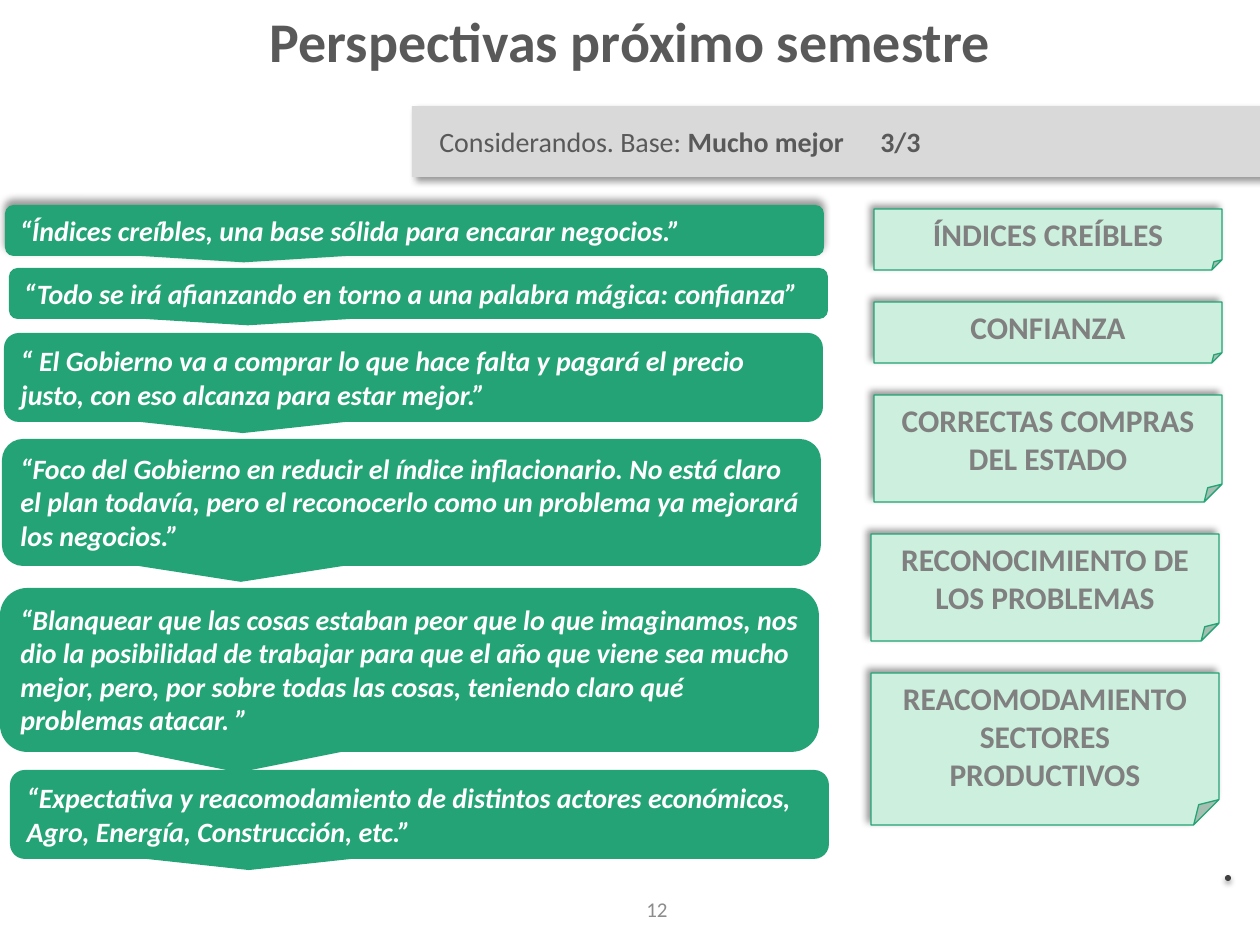
import pptx
import pptx.util
import pptx.dml.color
import pptx.enum.shapes
import pptx.enum.text
import pptx.oxml
import pptx.oxml.ns

RGB = pptx.dml.color.RGBColor
SHAPE = pptx.enum.shapes.MSO_SHAPE
ALIGN = pptx.enum.text.PP_ALIGN
ANCHOR = pptx.enum.text.MSO_ANCHOR

GREEN = RGB(0x24, 0xA4, 0x76)
MINT = RGB(0xCD, 0xEF, 0xDE)
WHITE = RGB(0xFF, 0xFF, 0xFF)
SILVER = RGB(0xD9, 0xD9, 0xD9)
GRAY = RGB(0x80, 0x80, 0x80)
LIGHT_GRAY = RGB(0x8C, 0x8C, 0x8C)
DARK_GRAY = RGB(0x59, 0x59, 0x59)
CHARCOAL = RGB(0x40, 0x40, 0x40)

EMU_PER_PX = 914400 / 126

# left, top, height, text
QUOTES = [
    (5, 205, 51, "“Índices creíbles, una base sólida para encarar negocios.”"),
    (9, 268, 51, "“Todo se irá afianzando en torno a una palabra mágica: confianza”"),
    (4, 333, 89, "“ El Gobierno va a comprar lo que hace falta y pagará el precio "
                 "justo, con eso alcanza para estar mejor.”"),
    (2, 439, 127, "“Foco del Gobierno en reducir el índice inflacionario. No está claro "
                  "el plan todavía, pero el reconocerlo como un problema ya mejorará "
                  "los negocios.”"),
    (0, 588, 164, "“Blanquear que las cosas estaban peor que lo que imaginamos, nos dio "
                  "la posibilidad de trabajar para que el año que viene sea mucho mejor, "
                  "pero, por sobre todas las cosas, teniendo claro qué problemas atacar. ”"),
    (10, 770, 89, "“Expectativa y reacomodamiento de distintos actores económicos, "
                  "Agro, Energía, Construcción, etc.”"),
]
# left, height, text
NOTES = [
    (874, 61, "ÍNDICES CREÍBLES"),
    (874, 61, "CONFIANZA"),
    (874, 107, "CORRECTAS COMPRAS DEL ESTADO"),
    (871, 107, "RECONOCIMIENTO DE LOS PROBLEMAS"),
    (871, 152, "REACOMODAMIENTO SECTORES PRODUCTIVOS"),
]
NOTES_TOP, NOTES_GAP = 209, 32


def px(n):
    return pptx.util.Emu(round(n * EMU_PER_PX))


def set_font(p, size, color, bold=None, italic=None):
    f = p.font
    f.name, f.size, f.color.rgb = "Calibri", pptx.util.Pt(size), color
    f.bold, f.italic = bold, italic


def add_shadow(sp, direction, blur=4, dist=3, alpha=40):
    effects = sp._element.spPr.find(pptx.oxml.ns.qn("a:effectLst"))
    effects.append(pptx.oxml.parse_xml(
        f'<a:outerShdw {pptx.oxml.ns.nsdecls("a")} blurRad="{round(blur * 12700)}" '
        f'dist="{round(dist * 12700)}" dir="{direction * 60000}" rotWithShape="0">'
        f'<a:srgbClr val="000000"><a:alpha val="{alpha * 1000}"/></a:srgbClr>'
        '</a:outerShdw>'))


def add_box(s, kind, x, y, w, h, fill, line=None):
    sp = s.shapes.add_shape(kind, px(x), px(y), px(w), px(h))
    sp.shadow.inherit = False
    sp.fill.solid()
    sp.fill.fore_color.rgb = fill
    if line is None:
        sp.line.fill.background()
    else:
        sp.line.color.rgb = line
        sp.line.width = pptx.util.Pt(0.75)
    return sp


def write(sp, text, align, size, color, bold=None, italic=None, anchor=ANCHOR.TOP):
    tf = sp.text_frame
    tf.word_wrap = True
    tf.auto_size = pptx.enum.text.MSO_AUTO_SIZE.NONE
    tf.vertical_anchor = anchor
    p = tf.paragraphs[0]
    p.text = text
    p.alignment = align
    set_font(p, size, color, bold, italic)


def add_title(s, text):
    sp = s.shapes.title
    sp.left, sp.top, sp.width, sp.height = px(0), px(0), px(1260), px(81)
    write(sp, text, ALIGN.CENTER, 32, DARK_GRAY, bold=True)


def add_banner(s):
    sp = add_box(s, SHAPE.RECTANGLE, 412, 106, 877, 71, SILVER)
    add_shadow(sp, 45)
    write(sp, "", ALIGN.LEFT, 16, DARK_GRAY, anchor=ANCHOR.MIDDLE)
    p = sp.text_frame.paragraphs[0]
    p._p.get_or_add_pPr().set("marL", str(px(15)))
    p.add_run().text = "Considerandos. Base: "
    r = p.add_run()
    r.text = "Mucho mejor\t3/3"
    r.font.bold = True


def add_quote(s, x, y, h, text):
    sp = add_box(s, SHAPE.ROUNDED_RECTANGULAR_CALLOUT, x, y, 819, h, GREEN)
    write(sp, text, ALIGN.LEFT, 16, WHITE, bold=True, italic=True)
    return sp


def add_note(s, x, y, h, text):
    sp = add_box(s, SHAPE.FOLDED_CORNER, x, y, 348, h, MINT, GREEN)
    add_shadow(sp, 225)
    write(sp, text, ALIGN.CENTER, 18, GRAY, bold=True)


def main():
    prs = pptx.Presentation()
    prs.slide_width, prs.slide_height = px(1260), px(945)
    s = prs.slides.add_slide(prs.slide_layouts[5])

    # Heading
    add_title(s, "Perspectivas próximo semestre")
    add_banner(s)

    # Quotes; only the first one casts a shadow
    quotes = [add_quote(s, *quote) for quote in QUOTES]
    add_shadow(quotes[0], 270)

    # Key ideas, stacked with an equal gap
    top = NOTES_TOP
    for left, height, text in NOTES:
        add_note(s, left, top, height, text)
        top += height + NOTES_GAP

    # Page number and closing dot
    number = s.shapes.add_textbox(px(386), px(875), px(294), px(69))
    write(number, "12", ALIGN.RIGHT, 12, LIGHT_GRAY, anchor=ANCHOR.MIDDLE)
    dot = add_box(s, SHAPE.OVAL, 1225, 875, 6, 6, CHARCOAL)
    add_shadow(dot, 90, blur=3.1, dist=1.6, alpha=38)

    prs.save("out.pptx")


if __name__ == "__main__":
    main()
